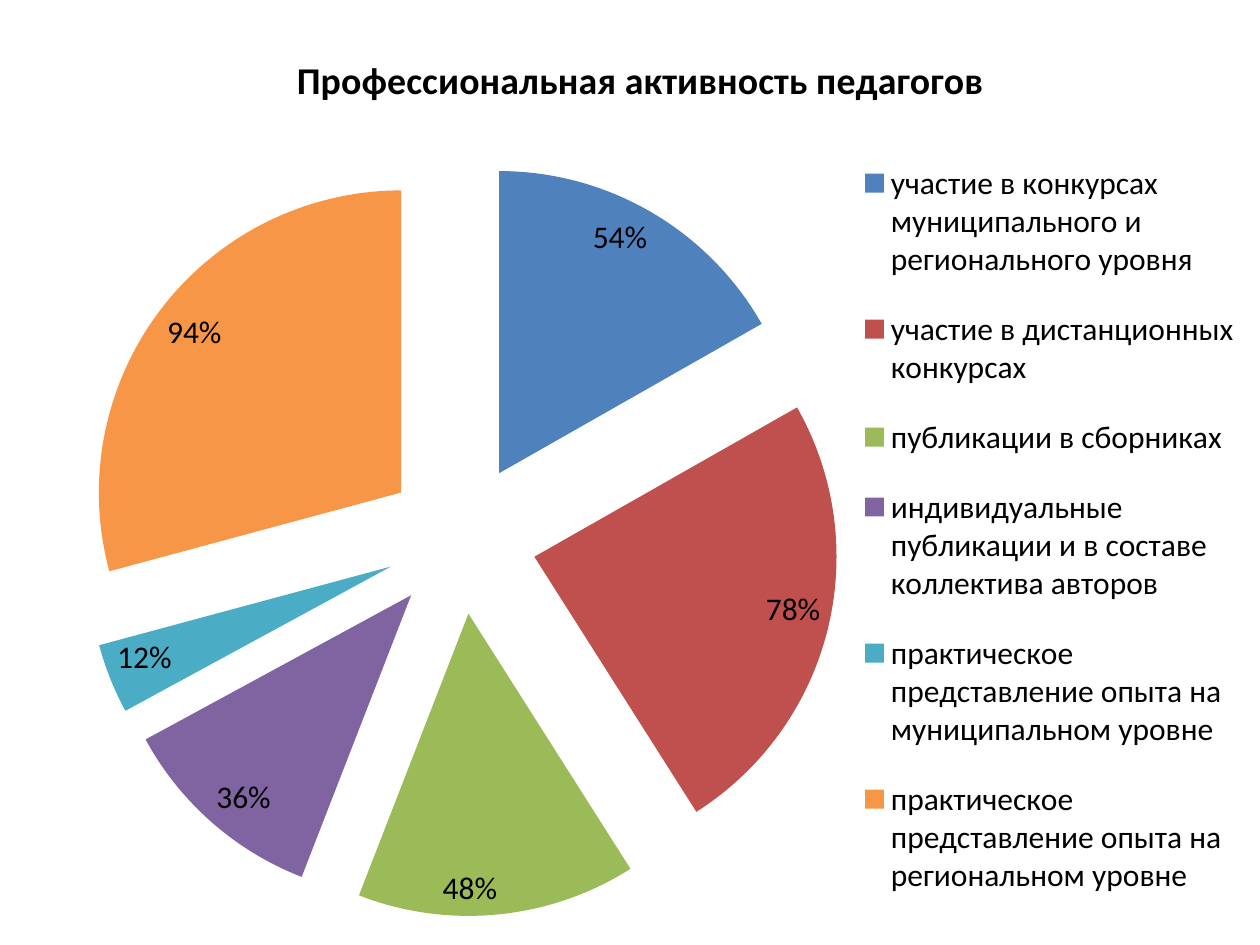
from lxml import etree
from pptx import Presentation
from pptx.chart.data import CategoryChartData
from pptx.dml.color import RGBColor
from pptx.enum.chart import XL_CHART_TYPE, XL_LABEL_POSITION, XL_LEGEND_POSITION
from pptx.oxml.ns import qn
from pptx.util import Inches, Pt

PIE = XL_CHART_TYPE.PIE
INSIDE_END = XL_LABEL_POSITION.INSIDE_END
RIGHT = XL_LEGEND_POSITION.RIGHT

# Content: category, share, slice colour
TITLE = "Профессиональная активность педагогов"
ACTIVITIES = [
    ("участие в конкурсах муниципального и регионального уровня", 0.54, "4F81BD"),
    ("участие в дистанционных конкурсах", 0.78, "C0504D"),
    ("публикации в сборниках", 0.48, "9BBB59"),
    ("индивидуальные публикации и в составе коллектива авторов", 0.36, "8064A2"),
    ("практическое представление опыта на муниципальном уровне", 0.12, "4BACC6"),
    ("практическое представление опыта на региональном уровне", 0.94, "F79646"),
]
THEME = {"font": "Calibri", "text": "000000", "body": 18, "title": 21.6}
EXPLOSION = 25
# Fractions of the chart frame: x, y, width, height
PIE_AREA = (0.05, 0.15, 0.61, 0.82)
LEGEND_AREA = (0.67, 0.12, 0.32, 0.86)


def format_font(font, size, bold=False):
    font.name = THEME["font"]
    font.size = Pt(size)
    font.bold = bold
    font.color.rgb = RGBColor.from_string(THEME["text"])


def write_text(frame, text, **font_format):
    frame.text = text
    format_font(frame.paragraphs[0].runs[0].font, **font_format)


def make_layout(area, inner=False):
    layout = etree.Element(qn("c:layout"))
    manual = etree.SubElement(layout, qn("c:manualLayout"))
    settings = [("layoutTarget", "inner")] if inner else []
    settings += [("xMode", "edge"), ("yMode", "edge")]
    settings += zip("xywh", area)
    for tag, value in settings:
        etree.SubElement(manual, qn(f"c:{tag}")).set("val", str(value))
    return layout


prs = Presentation()
prs.slide_width, prs.slide_height = Inches(10), Inches(7.5)
slide = prs.slides.add_slide(prs.slide_layouts[6])

# Pie chart
data = CategoryChartData(number_format="0%")
data.categories = [name for name, _, _ in ACTIVITIES]
data.add_series(TITLE, [share for _, share, _ in ACTIVITIES])
chart = slide.shapes.add_chart(
    PIE, Inches(0.17), Inches(0.17), Inches(9.83), Inches(7.33), data).chart
format_font(chart.font, THEME["body"])
chart.has_title = True
write_text(chart.chart_title.text_frame, TITLE, size=THEME["title"], bold=True)

# Exploded slices
plot = chart.plots[0]
plot.vary_by_categories = True
shares = plot.series[0]
for index, (_, _, color) in enumerate(ACTIVITIES):
    fill = shares.points[index].format.fill
    fill.solid()
    fill.fore_color.rgb = RGBColor.from_string(color)
explosion = etree.Element(qn("c:explosion"))
explosion.set("val", str(EXPLOSION))
shares.points[0]
first_point = shares._element.find(qn("c:dPt"))
first_point.addprevious(explosion)

# Value labels
plot.has_data_labels = True
labels = plot.data_labels
labels.show_value = True
labels.show_percentage = False
labels.number_format = "0%"
labels.number_format_is_linked = False
labels.position = INSIDE_END
format_font(labels.font, THEME["body"])

# Legend
chart.has_legend = True
legend = chart.legend
legend.position = RIGHT
legend.include_in_layout = False
format_font(legend.font, THEME["body"])

# Places of the pie and the legend
plot_area = chart._chartSpace.chart.plotArea
for old in plot_area.findall(qn("c:layout")):
    plot_area.remove(old)
plot_area.insert(0, make_layout(PIE_AREA, inner=True))
legend_xml = legend._element
for old in legend_xml.findall(qn("c:layout")):
    legend_xml.remove(old)
legend_xml.find(qn("c:legendPos")).addnext(make_layout(LEGEND_AREA))

prs.save("out.pptx")
